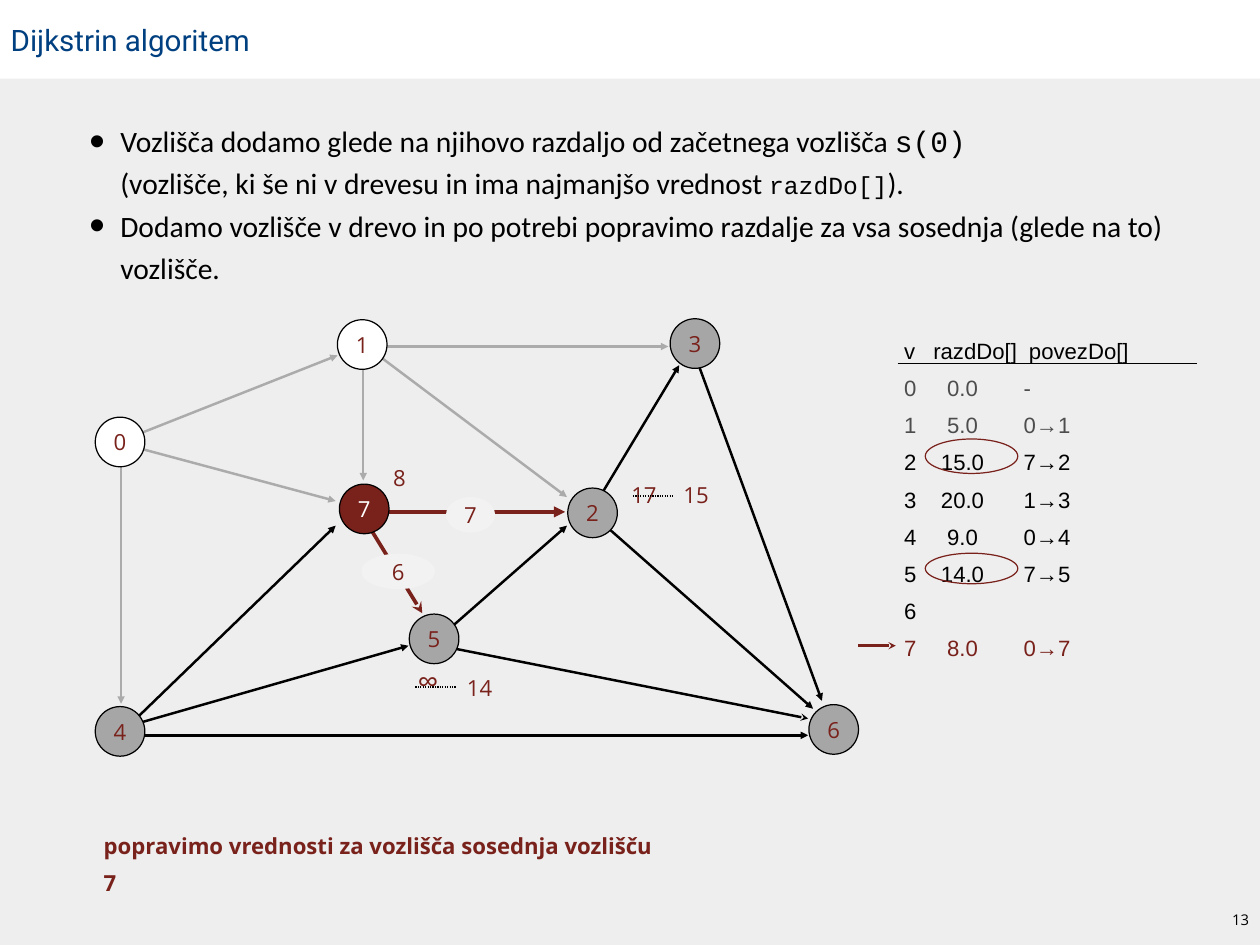
import pptx
import pptx.util
import pptx.dml.color
import pptx.enum.dml
import pptx.enum.shapes
import pptx.enum.text
import pptx.oxml
import pptx.oxml.ns

COLS, ROWS = 128, 96
BLACK, WHITE, RED = "000000", "FFFFFF", "79211B"
GREY, PALE, MID, DIM = "ABABAB", "F2F2F2", "A6A6A6", "4D4D4D"
ALIGN = pptx.enum.text.PP_ALIGN
ANCHOR = pptx.enum.text.MSO_ANCHOR


def paint(target, shade):
    if hasattr(target, "solid"):
        target.solid()
        target = target.fore_color
    target.rgb = pptx.dml.color.RGBColor.from_string(shade)


def add_xml(parent, tag, **attrs):
    node = pptx.oxml.parse_xml(f"<a:{tag} {pptx.oxml.ns.nsdecls('a')}/>")
    for key, value in attrs.items():
        node.set(key, str(value))
    parent.append(node)
    return node


class Board:
    font = "Open Sans"
    size = 18

    def __init__(self, deck):
        self.wide, self.high = deck.slide_width, deck.slide_height
        self.slide = deck.slides.add_slide(deck.slide_layouts[5])
        self.shapes = self.slide.shapes
        paint(self.slide.background.fill, "EEEEEE")

    def spot(self, col, row):
        return round(col * self.wide / COLS), round(row * self.high / ROWS)

    def style(self, run, size=None, font=None, shade=RED, bold=False):
        run.font.size = pptx.util.Pt(size or self.size)
        run.font.name = font or self.font
        run.font.bold = bold
        paint(run.font.color, shade)

    def frame(self, shape, anchor=ANCHOR.TOP, pads=(0.06, 0, 0, 0)):
        body = shape.text_frame
        body.word_wrap = True
        body.auto_size = pptx.enum.text.MSO_AUTO_SIZE.NONE
        body.vertical_anchor = anchor
        for side, pad in zip(("left", "top", "right", "bottom"), pads):
            setattr(body, f"margin_{side}", pptx.util.Inches(pad))
        return body

    def title(self, words, box):
        shape = self.shapes.title
        shape.left, shape.top = self.spot(*box[:2])
        shape.width, shape.height = self.spot(*box[2:])
        paint(shape.fill, WHITE)
        body = self.frame(shape, ANCHOR.MIDDLE, (0.12, 0.06, 0.18, 0.06))
        body.text = words
        body.paragraphs[0].alignment = ALIGN.LEFT
        self.style(body.paragraphs[0].runs[0], 24, "Roboto", "004080")

    def text(self, words, box, gap=None, align=ALIGN.LEFT, **look):
        shape = self.shapes.add_textbox(*self.spot(*box[:2]), *self.spot(*box[2:]))
        body = self.frame(shape)
        body.text = words
        for para in body.paragraphs:
            para.alignment = align
            if gap:
                para.line_spacing = pptx.util.Pt(gap)
            for run in para.runs:
                self.style(run, **look)
        return body

    def points(self, items, box):
        shape = self.shapes.add_textbox(*self.spot(*box[:2]), *self.spot(*box[2:]))
        body = self.frame(shape, pads=(0.06, 0.06, 0.18, 0.06))
        for rank, lines in enumerate(items):
            para = body.add_paragraph() if rank else body.paragraphs[0]
            para.line_spacing = pptx.util.Pt(34.4)
            props = para._p.get_or_add_pPr()
            props.set("marL", str(pptx.util.Inches(0.41)))
            props.set("indent", str(pptx.util.Inches(-0.35)))
            add_xml(props, "buSzPct", val=150000)
            add_xml(props, "buFont", typeface="Arial")
            add_xml(props, "buChar", char="•")
            for row, parts in enumerate(lines):
                if row:
                    para.add_line_break()
                for words, font, size in parts:
                    run = para.add_run()
                    run.text = words
                    self.style(run, size, font, BLACK)

    def oval(self, box, words="", fill=None, line=None, shade=RED):
        shape = self.shapes.add_shape(pptx.enum.shapes.MSO_SHAPE.OVAL,
                                      *self.spot(*box[:2]), *self.spot(*box[2:]))
        shape.shadow.inherit = False
        if fill:
            paint(shape.fill, fill)
        else:
            shape.fill.background()
        if line:
            paint(shape.line.fill, line)
            shape.line.width = pptx.util.Pt(1)
        else:
            shape.line.fill.background()
        if words:
            body = self.frame(shape, ANCHOR.MIDDLE, (0, 0, 0, 0))
            body.text = words
            body.paragraphs[0].alignment = ALIGN.CENTER
            self.style(body.paragraphs[0].runs[0], shade=shade)

    def line(self, start, end, shade=BLACK, width=1, tip=None, dots=False):
        link = self.shapes.add_connector(pptx.enum.shapes.MSO_CONNECTOR.STRAIGHT,
                                         *self.spot(*start), *self.spot(*end))
        paint(link.line.fill, shade)
        link.line.width = pptx.util.Pt(width)
        if dots:
            link.line.dash_style = pptx.enum.dml.MSO_LINE.ROUND_DOT
        if tip:
            add_xml(link.line._get_or_add_ln(), "tailEnd", type=tip)
        add_xml(link._element.spPr, "effectLst")

    def grid(self, rows, box):
        body = self.text("\n".join("\t".join(cells) for cells, _ in rows), box,
                         gap=30.2, font="Arial")
        for rank, (para, (_, shade)) in enumerate(zip(body.paragraphs, rows)):
            paint(para.runs[0].font.color, shade)
            stops = ((0.66, "ctr"), (1.35, "l")) if rank else ((0.33, "l"), (1.41, "l"))
            tabs = add_xml(para._p.get_or_add_pPr(), "tabLst")
            for place, kind in stops:
                add_xml(tabs, "tab", pos=pptx.util.Inches(place), algn=kind)


POINTS = [
    [[("Vozlišča dodamo glede na njihovo razdaljo od začetnega vozlišča ", "Calibri", 24),
      ("s(0)", "Courier New", 24)],
     [("(vozlišče, ki še ni v drevesu in ima najmanjšo vrednost ", "Calibri", 24),
      ("razdDo[]", "Courier New", 20), (").", "Calibri", 24)]],
    [[("Dodamo vozlišče v drevo in po potrebi popravimo razdalje za vsa sosednja "
       "(glede na to) vozlišče.", "Calibri", 24)]],
]
EDGES = [
    ((45.2, 65.7), (82.1, 73), BLACK, 2, "stealth"),
    ((12.7, 74.1), (34.1, 53.4), BLACK, 2, "triangle"),
    ((36.4, 52), (57.4, 52), RED, 3, "triangle"),
    ((36.9, 34.9), (36.9, 48.8), GREY, 2, "triangle"),
    ((70.5, 35.8), (83.5, 71.2), BLACK, 2, "triangle"),
    ((59.6, 52.7), (69, 37.1), BLACK, 2, "triangle"),
    ((61.5, 53.4), (82.6, 72), BLACK, 2, "triangle"),
    ((12.2, 74.7), (82.1, 74.7), BLACK, 2, "triangle"),
    ((12.3, 46.4), (12.3, 71.5), GREY, 2, "triangle"),
    ((12.5, 45.1), (34.1, 50.9), GREY, 2, "triangle"),
    ((12.8, 44.6), (34.3, 36.1), GREY, 2, "triangle"),
    ((37.5, 35.4), (57.6, 50.5), GREY, 2, "triangle"),
    ((36.7, 35.2), (67.9, 35.2), GREY, 2, "triangle"),
    ((36.4, 51.7), (42.9, 62.3), RED, 3, "stealth"),
    ((44.5, 64.9), (57.6, 53.4), BLACK, 2, "triangle"),
    ((12.2, 74), (41.5, 65.6), BLACK, 2, "triangle"),
]
NODES = [(12.2, 44.9, WHITE), (36.8, 35, WHITE), (60.2, 52.1, MID), (70.6, 34.9, MID),
         (12.2, 74.3, MID), (44.1, 64.9, MID), (84.7, 74.1, MID), (37, 51.7, RED)]
SIDE = 5.04
STATE = [
    (("v", "razdDo[]", "povezDo[]"), BLACK),
    (("0", "0.0", "-"), DIM),
    (("1", "5.0", "0→1"), DIM),
    (("2", "15.0", "7→2"), BLACK),
    (("3", "20.0", "1→3"), BLACK),
    (("4", "9.0", "0→4"), BLACK),
    (("5", "14.0", "7→5"), BLACK),
    (("6",), BLACK),
    (("7", "8.0", "0→7"), RED),
]
COSTS = [("8", 39.4, 47.2, 18), ("17", 63.6, 48.9, 18), ("15", 68.9, 48.9, 18),
         ("∞", 41.9, 67.4, 24), ("14", 46.9, 68.5, 18)]


def main():
    deck = pptx.Presentation()
    deck.slide_width = pptx.util.Inches(14.22)
    deck.slide_height = pptx.util.Inches(10.67)
    board = Board(deck)
    board.title("Dijkstrin algoritem", (0, 0, COLS, 8))
    board.text("13", (124.2, 92.5, 3.1, 2.9), align=ALIGN.CENTER, size=12, shade=BLACK)
    board.points(POINTS, (8, 11.25, 112, 20))
    for edge in EDGES:
        board.line(*edge)
    for rank, (col, row, fill) in enumerate(NODES):
        board.oval((col - SIDE / 2, row - SIDE / 2, SIDE, SIDE), str(rank), fill, BLACK,
                   WHITE if fill == RED else RED)
    board.text("popravimo vrednosti za vozlišča sosednja vozlišču 7", (10, 83.5, 57.4, 7.6),
               gap=30.2, bold=True)
    board.grid(STATE, (91.3, 33.2, 24.2, 34.4))
    board.line((91.2, 36.9), (121.6, 36.9))
    board.oval((36.7, 56.25, 7.5, 3.6), "6", PALE)
    board.oval((45.3, 50.5, 5, 3.6), "7", PALE)
    board.line((87.2, 65.6), (91, 65.6), RED, 2, "stealth")
    board.oval((94, 56.2, 9.4, 3.1), line=RED)
    board.oval((94, 44.6, 9.4, 3.5), line=RED)
    for words, col, row, size in COSTS:
        board.text(words, (col, row, 4.6, 3.6), size=size)
    for col, row in ((42.2, 69.8), (64.3, 50.4)):
        board.line((col, row), (col + 4.1, row), dots=True)
    deck.save("out.pptx")


if __name__ == "__main__":
    main()
